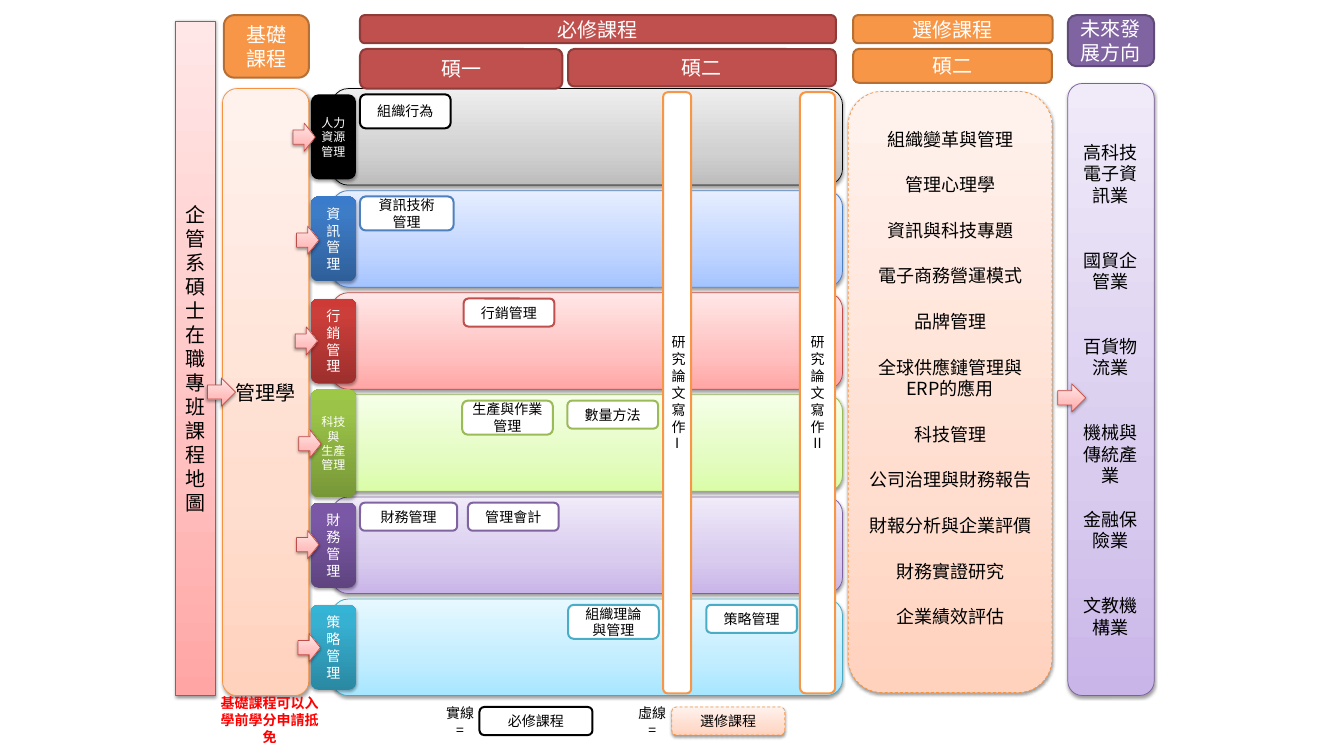
from dataclasses import dataclass
from typing import Optional

from lxml.etree import SubElement
from pptx import Presentation
from pptx.dml.color import RGBColor
from pptx.enum.dml import MSO_LINE
from pptx.enum.shapes import MSO_SHAPE
from pptx.enum.text import MSO_ANCHOR, MSO_AUTO_SIZE, PP_ALIGN
from pptx.oxml.ns import qn
from pptx.util import Pt

FONT = "Noto Sans CJK SC"
COLORS = {
    "black": "000000", "white": "FFFFFF", "alert": "FF0000",
    "blue": "4F81BD", "red": "C0504D", "green": "9BBB59",
    "purple": "8064A2", "teal": "4BACC6", "orange": "F79646",
    "red_edge": "8E3B39", "orange_edge": "B76F34", "purple_edge": "5F4A78",
    "blue_rim": "4B7EBC", "red_rim": "BF4C48", "green_rim": "98B955",
    "purple_rim": "7D60A0", "teal_rim": "46AAC5", "orange_rim": "F69240",
}
# Gradient stops run from the bottom edge to the top edge
PALE = {
    "black": ("BDBDBD", "D1D1D1", "EEEEEE"), "blue": ("A4C4FF", "BFD4FF", "E6EEFF"),
    "red": ("FFA6A5", "FFC0BF", "FFE7E7"), "green": ("DAFDA7", "E4FCC2", "F5FFE7"),
    "purple": ("C9B5E8", "D8CBEE", "F0EAF9"), "teal": ("A7E6FF", "C1EDFF", "E7F8FF"),
    "orange": ("FFD2BD", "FFDED0", "FFF2ED"),
}
DEEP = {
    "blue": ("2F5F99", "3D7CC7", "3A7CCB"), "red": ("9C2F2D", "CB3E3A", "CE3B37"),
    "green": ("779737", "9BC348", "9DC746"), "purple": ("5F4480", "7B58A6", "7C57A8"),
    "teal": ("2A88A2", "37B1D2", "34B4D6"),
}


@dataclass(frozen=True)
class Style:
    fill: Optional[str] = None
    stops: tuple = ()
    middle: int = 35
    line: Optional[str] = None
    width: float = 2
    dash: bool = False
    shadow: tuple = ()  # opacity in percent, distance in points


@dataclass(frozen=True)
class Label:
    paras: tuple
    size: int = 20
    color: str = "black"
    bold: bool = False
    gaps: tuple = ()  # space before each paragraph
    bottom: float = 3.6


@dataclass(frozen=True)
class Box:
    at: tuple  # left, top, width, height
    style: Style
    label: Optional[Label] = None


@dataclass(frozen=True)
class Track:
    hue: str
    name: tuple
    arrow: tuple
    courses: tuple  # left, width, height, lines
    size: int = 14


def pale(hue: str, dash: bool = False) -> Style:
    rim = "black" if hue == "black" else hue + "_rim"
    return Style(stops=PALE[hue], line=rim, width=0.75, dash=dash, shadow=(38, 1.6))


def deep(hue: str) -> Style:
    if hue == "black":
        return Style(fill=hue, shadow=(35, 1.8))
    return Style(stops=DEEP[hue], middle=80, shadow=(35, 1.8))


def header(at: tuple, hue: str, *paras: str) -> Box:
    return Box(at, Style(hue, line=hue + "_edge"), Label(paras, color="white"))


def card(at: tuple, hue: str, *paras: str) -> Box:
    return Box(at, Style("white", line=hue), Label(paras, 14))


def rgb(name: str) -> RGBColor:
    return RGBColor.from_string(COLORS[name])


def paint(sp, style: Style) -> None:
    sp.shadow.inherit = False
    spPr = sp._element.spPr
    if style.stops:
        sp.fill.gradient()
        sp.fill.gradient_angle = 90
        gs_list = spPr.find(".//" + qn("a:gsLst"))
        for gs in list(gs_list):
            gs_list.remove(gs)
        for pos, color in zip((0, style.middle, 100), style.stops):
            gs = SubElement(gs_list, qn("a:gs"), pos=str(pos * 1000))
            SubElement(gs, qn("a:srgbClr"), val=color)
    elif style.fill:
        sp.fill.solid()
        sp.fill.fore_color.rgb = rgb(style.fill)
    else:
        sp.fill.background()
    if style.line:
        sp.line.color.rgb = rgb(style.line)
        sp.line.width = Pt(style.width)
        if style.dash:
            sp.line.dash_style = MSO_LINE.DASH
    else:
        sp.line.fill.background()
    if style.shadow:
        opacity, dist = style.shadow
        shadow = SubElement(spPr.find(qn("a:effectLst")), qn("a:outerShdw"),
                            blurRad=str(Pt(3.1)), dist=str(Pt(dist)), dir="5400000", rotWithShape="0")
        clr = SubElement(shadow, qn("a:srgbClr"), val=COLORS["black"])
        SubElement(clr, qn("a:alpha"), val=str(opacity * 1000))


def write(sp, label: Label) -> None:
    tf = sp.text_frame
    frame = {"word_wrap": True, "auto_size": MSO_AUTO_SIZE.NONE, "vertical_anchor": MSO_ANCHOR.MIDDLE,
             "margin_left": Pt(7.2), "margin_right": Pt(7.2),
             "margin_top": Pt(3.6), "margin_bottom": Pt(label.bottom)}
    for key, value in frame.items():
        setattr(tf, key, value)
    font = {"name": FONT, "size": Pt(label.size), "bold": label.bold}
    for i, text in enumerate(label.paras):
        p = tf.add_paragraph() if i else tf.paragraphs[0]
        p.alignment = PP_ALIGN.CENTER
        if i and label.gaps:
            p.space_before = Pt(label.gaps[i])
        r = p.add_run()
        r.text = text
        for key, value in font.items():
            setattr(r.font, key, value)
        r.font.color.rgb = rgb(label.color)
        SubElement(r._r.get_or_add_rPr(), qn("a:ea"), typeface=FONT)


def draw(s, box: Box, kind=MSO_SHAPE.ROUNDED_RECTANGLE) -> None:
    sp = s.shapes.add_shape(kind, *map(Pt, box.at))
    paint(sp, box.style)
    if box.label:
        write(sp, box.label)


def draw_title(s, box: Box) -> None:
    sp = s.shapes.title
    for key, value in zip(("left", "top", "width", "height"), box.at):
        setattr(sp, key, Pt(value))
    geom = SubElement(sp._element.spPr, qn("a:prstGeom"), prst="roundRect")
    SubElement(geom, qn("a:avLst"))
    paint(sp, box.style)
    write(sp, box.label)


TITLE = Box((175.7, 20.9, 39.6, 674.6), pale("red"), Label(("企管系碩士在職專班課程地圖",)))
TRACKS = (
    Track("black", ("人力資源", "管理"), (293, 123.1), ((360, 90.7, 34, ("組織行為",)),), 12),
    Track("blue", ("資訊管理",), (296.6, 226.1), ((360, 93.6, 34, ("資訊技術", "管理")),)),
    Track("red", ("行銷管理",), (295.2, 326.9), ((463.7, 90.7, 28, ("行銷管理",)),)),
    Track("green", ("科技與", "生產管理"), (298.8, 429.8),
          ((462.2, 90.7, 34, ("生產與作業", "管理")), (567.4, 90.7, 28, ("數量方法",))), 12),
    Track("purple", ("財務管理",), (296.6, 530.6),
          ((360, 97.2, 28, ("財務管理",)), (468, 90.7, 28, ("管理會計",)))),
    Track("teal", ("策略管理",), (298.1, 633.6),
          ((568.1, 90.7, 34, ("組織理論", "與管理")), (706.3, 90.7, 28, ("策略管理",)))),
)
BAND_TOP, BAND_STEP, BAND_INSET = 88.6, 102.1, 5.75
ELECTIVES = ("組織變革與管理", "管理心理學", "資訊與科技專題", "電子商務營運模式", "品牌管理",
             "全球供應鏈管理與ERP的應用", "科技管理", "公司治理與財務報告", "財報分析與企業評價",
             "財務實證研究", "企業績效評估")
CAREERS = ("高科技電子資訊業", "國貿企管業", "百貨物流業", "機械與傳統產業", "金融保險業", "文教機構業")
PANELS = (
    Box((1067.8, 83.5, 86.4, 612), pale("purple"), Label(CAREERS, 18, gaps=(0, 43, 43, 43, 22, 43))),
    Box((222.5, 88.6, 86.4, 607), pale("orange"), Label(("管理學",))),
)
HEADERS = (
    header((1067.8, 15.1, 86.4, 51.1), "purple", "未來發展方向"),
    header((223.9, 15.1, 85, 62.6), "orange", "基礎", "課程"),
    header((360, 15.1, 475.9, 28.1), "red", "必修課程"),
    header((360, 49, 202.3, 39.6), "red", "碩一"),
    header((568.1, 49, 267.8, 37.4), "red", "碩二"),
    header((853.2, 15.1, 199.4, 28.1), "orange", "選修課程"),
    header((853.2, 49, 198.7, 33.8), "orange", "碩二"),
)
COLUMNS = (
    card((799.9, 92.2, 35.3, 601.2), "orange", "研究論文寫作II"),
    card((663.1, 92.2, 28.1, 601.2), "orange", "研究論文寫作I"),
    Box((848.2, 91.4, 203.8, 601.2), pale("orange", True),
        Label(ELECTIVES, 18, gaps=(24,) * len(ELECTIVES), bottom=32)),
)
LEGEND = (
    card((479.5, 707, 113, 28.1), "black", "必修課程"),
    Box((671.8, 707, 113, 28.1), pale("orange", True), Label(("選修課程",), 14)),
    Box((434.9, 707, 50.4, 28.1), Style(), Label(("實線=",), 14)),
    Box((627.1, 707, 50.4, 28.1), Style(), Label(("虛線=",), 14)),
    Box((207.4, 695.5, 124.6, 49), Style(), Label(("基礎課程可以入學前學分申請抵免",), 14, "alert", True)),
)


def main() -> None:
    prs = Presentation()
    prs.slide_width, prs.slide_height = Pt(1344), Pt(756)
    s = prs.slides.add_slide(prs.slide_layouts[5])
    draw_title(s, TITLE)
    for box in PANELS:
        draw(s, box)
    # Track bands with their required courses
    for i, track in enumerate(TRACKS):
        top = BAND_TOP + i * BAND_STEP
        draw(s, Box((332, top, 510.5, 96.5), pale(track.hue)))
        for left, width, height, lines in track.courses:
            draw(s, card((left, top + BAND_INSET, width, height), track.hue, *lines))
    for box in HEADERS + COLUMNS + LEGEND:
        draw(s, box)
    # Track tags, the technology one being taller
    for i, track in enumerate(TRACKS):
        top, height = BAND_TOP + i * BAND_STEP + BAND_INSET, 85
        if track.hue == "green":
            top, height = 389.5, 108
        draw(s, Box((311, top, 45, height), deep(track.hue), Label(track.name, track.size, "white")))
    # Arrows into the tags, the foundation panel and the careers panel
    arrows = [(*track.arrow, 22.3, 28.1) for track in TRACKS]
    for at in arrows + [(207.4, 378, 28.1, 28.1), (1057.7, 383.8, 28.1, 28.1)]:
        draw(s, Box(at, pale("red")), MSO_SHAPE.RIGHT_ARROW)
    prs.save("out.pptx")


if __name__ == "__main__":
    main()
